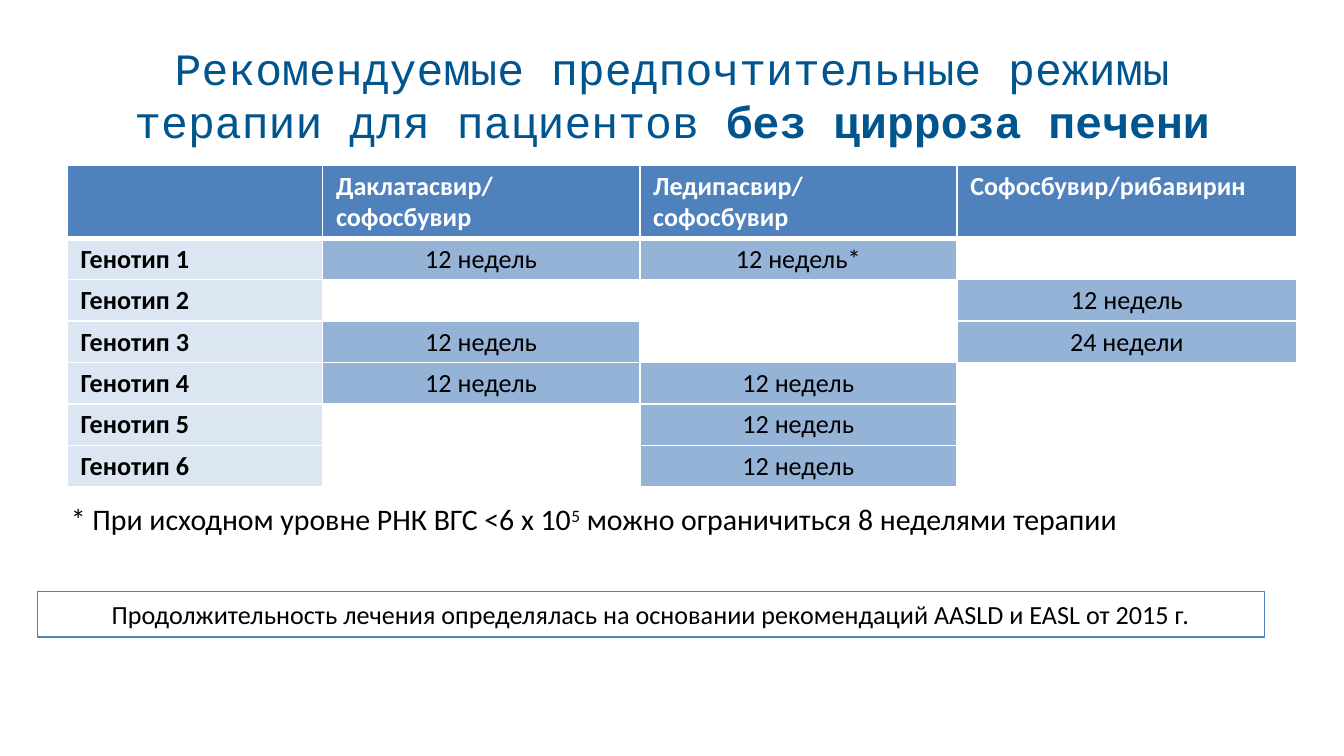
from lxml.etree import SubElement
from pptx import Presentation
from pptx.dml.color import RGBColor
from pptx.enum.shapes import MSO_SHAPE as Shape
from pptx.enum.text import MSO_ANCHOR as Anchor, PP_ALIGN as Align
from pptx.oxml.ns import qn
from pptx.util import Inches, Pt

THEME = {
    "title": RGBColor(0x00, 0x55, 0x8E),
    "header": RGBColor(0x4F, 0x81, 0xBD),
    "label": RGBColor(0xDC, 0xE6, 0xF2),
    "duration": RGBColor(0x95, 0xB3, 0xD7),
    "white": RGBColor(0xFF, 0xFF, 0xFF),
    "black": RGBColor(0x00, 0x00, 0x00),
    "title_font": "Courier New",
    "body_font": "Calibri",
    "title_size": Pt(24),
    "note_size": Pt(16),
    "body_size": Pt(14),
}

TITLE = ("Рекомендуемые предпочтительные режимы терапии для пациентов ", "без цирроза печени")
HEADERS = ("", "Даклатасвир/ софосбувир", "Ледипасвир/ софосбувир", "Софосбувир/рибавирин")
REGIMENS = (
    ("Генотип 1", "12 недель", "12 недель*", ""),
    ("Генотип 2", "", "", "12 недель"),
    ("Генотип 3", "12 недель", "", "24 недели"),
    ("Генотип 4", "12 недель", "12 недель", ""),
    ("Генотип 5", "", "12 недель", ""),
    ("Генотип 6", "", "12 недель", ""),
)
FOOTNOTE = ("* При исходном уровне РНК ВГС <6 х 10", "5", " можно ограничиться 8 неделями терапии")
SOURCE = "Продолжительность лечения определялась на основании рекомендаций AASLD и EASL от 2015 г."

COLUMN_WIDTHS = (1.9, 2.36, 2.36, 2.53)
ROW_HEIGHTS = (0.47, 0.3, 0.3, 0.3, 0.3, 0.28, 0.28)


def box(left, top, width, height):
    return [Inches(value) for value in (left, top, width, height)]


def style(paragraph, size, color, font="body_font", bold=False, align=Align.LEFT):
    paragraph.alignment = align
    paragraph.font.name = THEME[font]
    paragraph.font.size = THEME[size]
    paragraph.font.color.rgb = THEME[color]
    paragraph.font.bold = bold


def add_title(slide):
    title = slide.shapes.title
    title.left, title.top, title.width, title.height = box(0.5, 0.23, 9, 0.94)
    title.text_frame.vertical_anchor = Anchor.MIDDLE
    paragraph = title.text_frame.paragraphs[0]
    style(paragraph, "title_size", "title", "title_font", align=Align.CENTER)
    for text, bold in zip(TITLE, (False, True)):
        run = paragraph.add_run()
        run.text = text
        run.font.bold = bold


def add_border(cell, side, width):
    border = SubElement(cell._tc.get_or_add_tcPr(), qn(f"a:{side}"), w=str(Pt(width)))
    fill = SubElement(border, qn("a:solidFill"))
    SubElement(fill, qn("a:srgbClr"), val=str(THEME["white"]))


def fill_cell(cell, text, row, column):
    cell.margin_left = cell.margin_right = Inches(0.1)
    cell.margin_top = cell.margin_bottom = Pt(2.7)
    cell.text = text
    paragraph = cell.text_frame.paragraphs[0]
    if row == 0:
        fill, color, bold, align = "header", "white", True, Align.LEFT
    elif column == 0:
        fill, color, bold, align = "label", "black", True, Align.LEFT
    else:
        fill, color, bold, align = "duration" if text else None, "black", False, Align.CENTER
    style(paragraph, "body_size", color, bold=bold, align=align)
    if not text:
        end_properties = paragraph._p.get_or_add_endParaRPr()
        end_properties.set("sz", str(int(THEME["body_size"].pt * 100)))
    for side, width in (
        ("lnL", 1),
        ("lnR", 1),
        ("lnT", 3 if row == 1 else 1),
        ("lnB", 3 if row == 0 else 1),
    ):
        add_border(cell, side, width)
    if fill:
        cell.fill.solid()
        cell.fill.fore_color.rgb = THEME[fill]
    else:
        cell.fill.background()


def add_regimens(slide):
    rows = (HEADERS, *REGIMENS)
    area = box(0.5, 1.23, sum(COLUMN_WIDTHS), sum(ROW_HEIGHTS))
    table = slide.shapes.add_table(len(rows), len(HEADERS), *area).table
    table.horz_banding = False
    for column, width in zip(table.columns, COLUMN_WIDTHS):
        column.width = Inches(width)
    for row, height in zip(table.rows, ROW_HEIGHTS):
        row.height = Inches(height)
    for row, texts in enumerate(rows):
        for column, text in enumerate(texts):
            fill_cell(table.cell(row, column), text, row, column)


def add_footnote(slide):
    frame = slide.shapes.add_textbox(*box(0.43, 3.68, 8.1, 0.37)).text_frame
    frame.word_wrap = False
    paragraph = frame.paragraphs[0]
    style(paragraph, "note_size", "black")
    base, exponent, rest = (paragraph.add_run() for _ in FOOTNOTE)
    for run, text in zip((base, exponent, rest), FOOTNOTE):
        run.text = text
    exponent.font._element.set("baseline", "30000")


def add_source(slide):
    shape = slide.shapes.add_shape(Shape.RECTANGLE, *box(0.28, 4.4, 9.13, 0.34))
    shape.shadow.inherit = False
    shape.fill.background()
    shape.line.color.rgb = THEME["header"]
    shape.line.width = Pt(0.75)
    shape.text_frame.word_wrap = True
    shape.text_frame.text = SOURCE
    style(shape.text_frame.paragraphs[0], "body_size", "black", align=Align.CENTER)


def main():
    presentation = Presentation()
    presentation.slide_width = Inches(10)
    presentation.slide_height = Inches(10 * 9 / 16)
    slide = presentation.slides.add_slide(presentation.slide_layouts[5])
    add_title(slide)
    add_footnote(slide)
    add_regimens(slide)
    add_source(slide)
    presentation.save("out.pptx")


if __name__ == "__main__":
    main()
